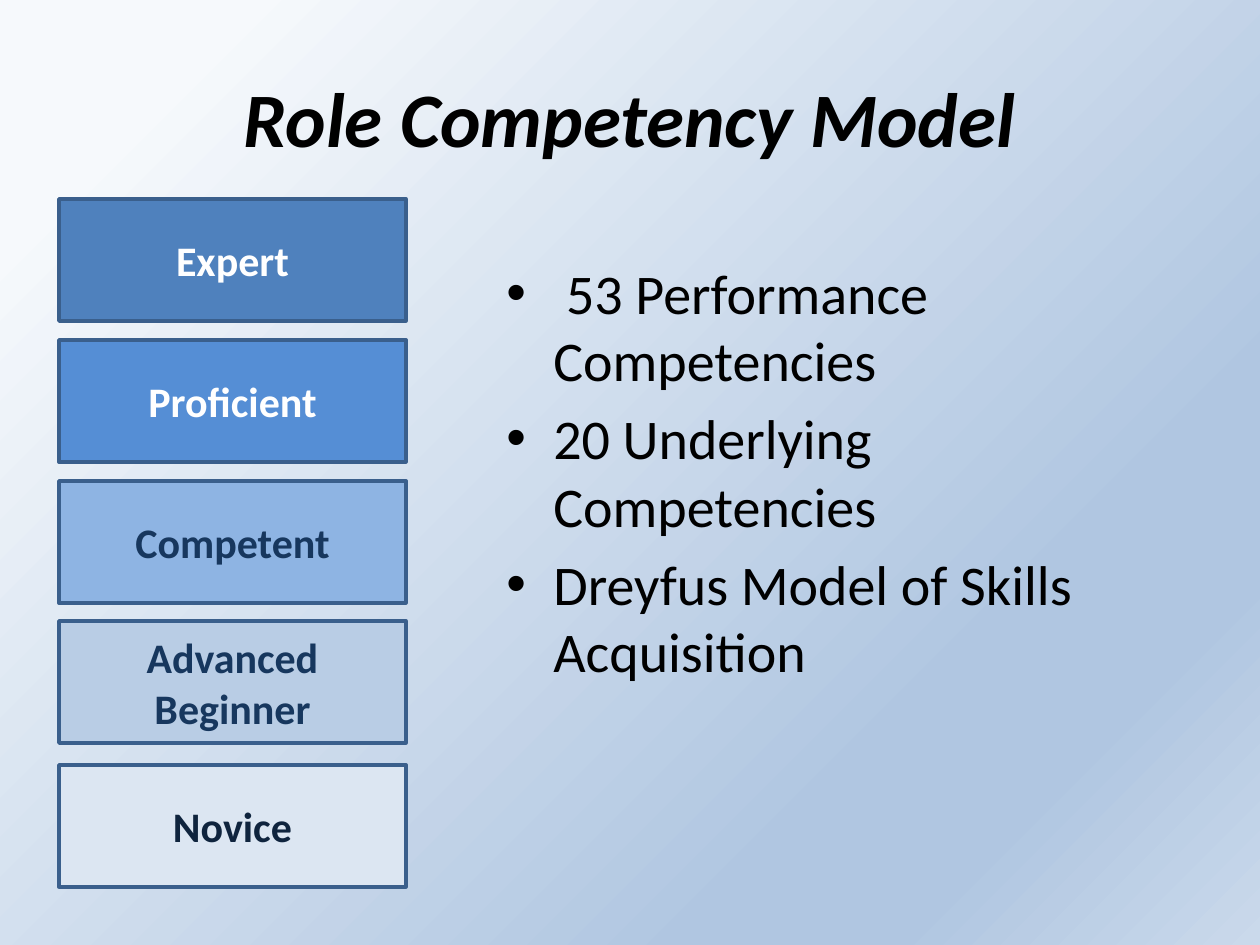
from copy import deepcopy

from lxml.etree import SubElement
from pptx import Presentation
from pptx.dml.color import RGBColor
from pptx.enum.shapes import MSO_SHAPE
from pptx.enum.text import MSO_ANCHOR, PP_ALIGN
from pptx.oxml.ns import qn
from pptx.util import Pt

EMU_PER_PX = 914400 / 126


def px(*lengths):
    """Turn pixel lengths into a list of EMU values."""
    return [round(length * EMU_PER_PX) for length in lengths]


def style(paragraph, size, color, bold=False, italic=False):
    font = paragraph.font
    font.name, font.size = "Calibri", Pt(size)
    font.bold, font.italic = bold, italic
    font.color.rgb = RGBColor.from_string(color)


prs = Presentation()
prs.slide_width, prs.slide_height = px(1260, 945)
slide = prs.slides.add_slide(prs.slide_layouts[6])

# Diagonal background gradient
background = slide.background.fill
background.gradient()
background.gradient_angle = 315
stop_list = slide.element.find(".//" + qn("a:gsLst"))
for _ in range(2):
    stop_list.append(deepcopy(stop_list[0]))
gradient = [(0.11, "F6F9FC"), (0.74, "B0C6E1"), (0.83, "B0C6E1"), (1, "CAD9EB")]
for stop, (position, color) in zip(background.gradient_stops, gradient):
    stop.position = position
    stop.color.rgb = RGBColor.from_string(color)

# Title
title = slide.shapes.add_textbox(*px(63, 38, 1134, 157)).text_frame
title.word_wrap = True
title.vertical_anchor = MSO_ANCHOR.MIDDLE
title.text = "Role Competency Model"
title.paragraphs[0].alignment = PP_ALIGN.CENTER
style(title.paragraphs[0], 44, "000000", bold=True, italic=True)

# Key points
points = slide.shapes.add_textbox(*px(494, 252, 725, 624)).text_frame
points.word_wrap = True
points.text = "\n".join([
    " 53 Performance Competencies",
    "20 Underlying Competencies",
    "Dreyfus Model of Skills Acquisition",
])
indent, = px(47)
for number, point in enumerate(points.paragraphs):
    if number:
        point.space_before = Pt(6.4)
    properties = point._p.get_or_add_pPr()
    properties.set("marL", str(indent))
    properties.set("indent", str(-indent))
    SubElement(properties, qn("a:buFont"), typeface="Arial")
    SubElement(properties, qn("a:buChar"), char="•")
    style(point, 32, "000000")

# Skill levels, highest first
levels = [
    ("Expert", 199, "4F81BD", "FFFFFF"),
    ("Proficient", 340, "558ED5", "FFFFFF"),
    ("Competent", 481, "8EB4E3", "17375E"),
    ("Advanced Beginner", 621, "B9CDE5", "17375E"),
    ("Novice", 765, "DCE6F2", "0F243E"),
]
for name, top, fill, text_color in levels:
    level = slide.shapes.add_shape(MSO_SHAPE.RECTANGLE, *px(59, top, 347, 122))
    level.shadow.inherit = False
    level.fill.solid()
    level.fill.fore_color.rgb = RGBColor.from_string(fill)
    level.line.color.rgb = RGBColor.from_string("3A5F8C")
    level.line.width = Pt(2)
    label = level.text_frame
    label.word_wrap = True
    label.vertical_anchor = MSO_ANCHOR.MIDDLE
    label.text = name
    label.paragraphs[0].alignment = PP_ALIGN.CENTER
    style(label.paragraphs[0], 24, text_color, bold=True)

prs.save("out.pptx")
